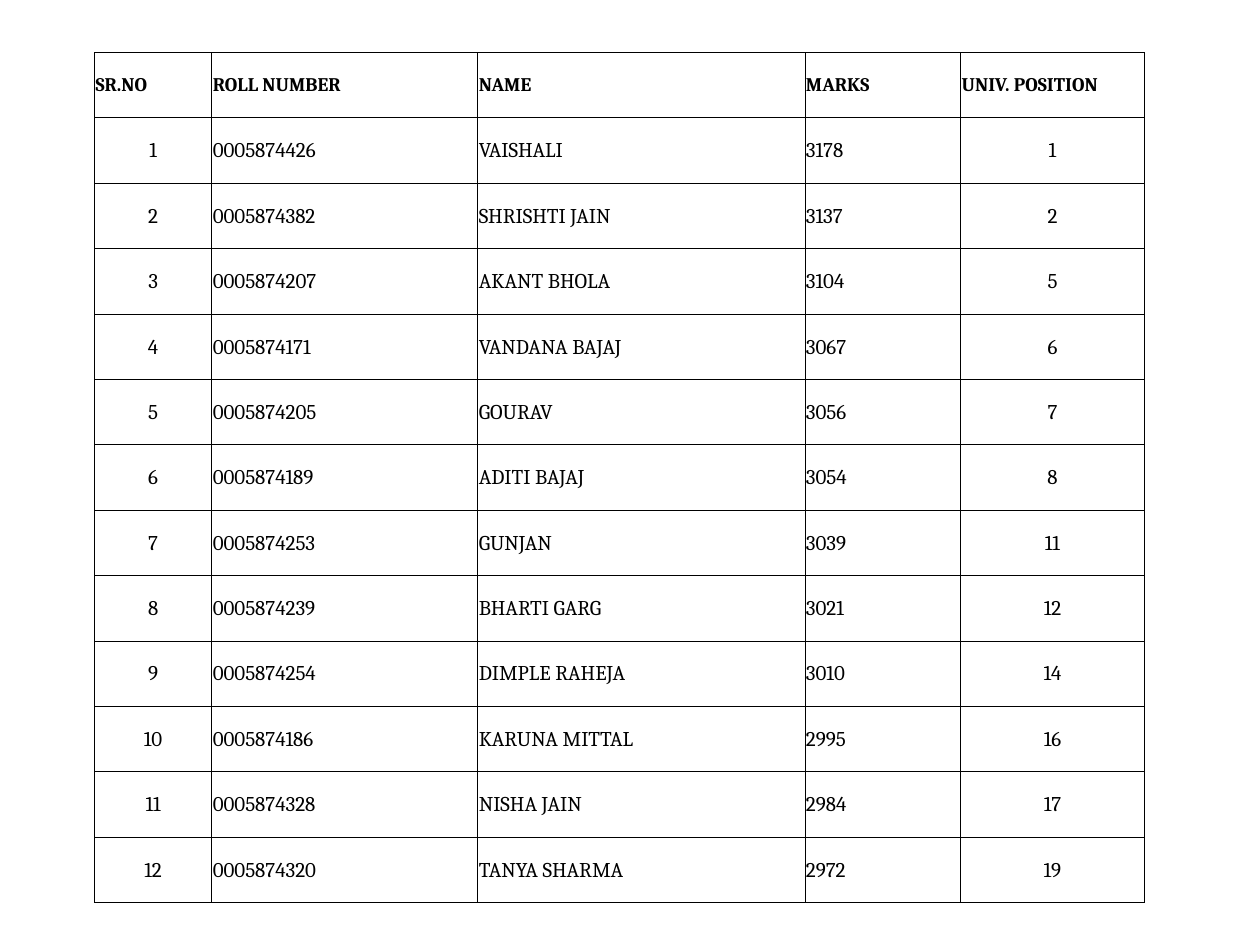
import pptx
import pptx.dml.color
import pptx.enum.text
import pptx.oxml
import pptx.oxml.ns
import pptx.util

Pt = pptx.util.Pt
ALIGN = pptx.enum.text.PP_ALIGN

HEADERS = ["SR.NO", "ROLL NUMBER", "NAME", "MARKS", "UNIV. POSITION"]
RESULTS = [
    ("0005874426", "VAISHALI", 3178, 1),
    ("0005874382", "SHRISHTI JAIN", 3137, 2),
    ("0005874207", "AKANT BHOLA", 3104, 5),
    ("0005874171", "VANDANA BAJAJ", 3067, 6),
    ("0005874205", "GOURAV", 3056, 7),
    ("0005874189", "ADITI BAJAJ", 3054, 8),
    ("0005874253", "GUNJAN", 3039, 11),
    ("0005874239", "BHARTI GARG", 3021, 12),
    ("0005874254", "DIMPLE RAHEJA", 3010, 14),
    ("0005874186", "KARUNA MITTAL", 2995, 16),
    ("0005874328", "NISHA JAIN", 2984, 17),
    ("0005874320", "TANYA SHARMA", 2972, 19),
]
COLUMN_SHARES = [67, 152, 187, 89, 105]
CENTRED_COLUMNS = (0, 4)


def color(hex_string):
    return pptx.dml.color.RGBColor.from_string(hex_string)


def add_borders(cell, hex_string, width):
    properties = cell._tc.get_or_add_tcPr()
    for side in ("lnL", "lnR", "lnT", "lnB"):
        properties.append(pptx.oxml.parse_xml(
            f'<a:{side} {pptx.oxml.ns.nsdecls("a")} w="{Pt(width)}">'
            f'<a:solidFill><a:srgbClr val="{hex_string}"/></a:solidFill>'
            f'</a:{side}>'))


def format_cell(cell, text, is_header, is_centred):
    cell.text = text
    cell.vertical_anchor = pptx.enum.text.MSO_ANCHOR.MIDDLE
    cell.margin_left = cell.margin_right = cell.margin_top = Pt(0.6)
    cell.margin_bottom = Pt(0)
    add_borders(cell, "000000", 0.5)
    cell.fill.background()

    paragraph = cell.text_frame.paragraphs[0]
    paragraph.alignment = ALIGN.CENTER if is_centred else ALIGN.LEFT
    paragraph.font.name = "Cambria"
    paragraph.font.size = Pt(11 if is_header else 12)
    paragraph.font.bold = is_header
    paragraph.font.color.rgb = color("000000")


def add_results_table(slide, left, top, width, height):
    # Serial numbers follow the order of the results
    rows = [HEADERS] + [(number, *result)
                        for number, result in enumerate(RESULTS, start=1)]
    table = slide.shapes.add_table(
        len(rows), len(HEADERS), Pt(left), Pt(top), Pt(width), Pt(height)).table
    table.first_row = False
    table.horz_banding = False

    # Column widths and equal row heights
    for column, share in zip(table.columns, COLUMN_SHARES):
        column.width = Pt(width * share / sum(COLUMN_SHARES))
    for row in table.rows:
        row.height = Pt(height / len(rows))

    # Cell contents
    for row_index, values in enumerate(rows):
        is_header = row_index == 0
        for column_index, value in enumerate(values):
            is_centred = not is_header and column_index in CENTRED_COLUMNS
            format_cell(table.cell(row_index, column_index), str(value),
                        is_header, is_centred)


def main():
    presentation = pptx.Presentation()
    presentation.slide_width = Pt(720)
    presentation.slide_height = Pt(540)
    slide = presentation.slides.add_slide(presentation.slide_layouts[6])
    add_results_table(slide, left=54, top=30, width=600, height=486)
    presentation.save("out.pptx")


if __name__ == "__main__":
    main()
